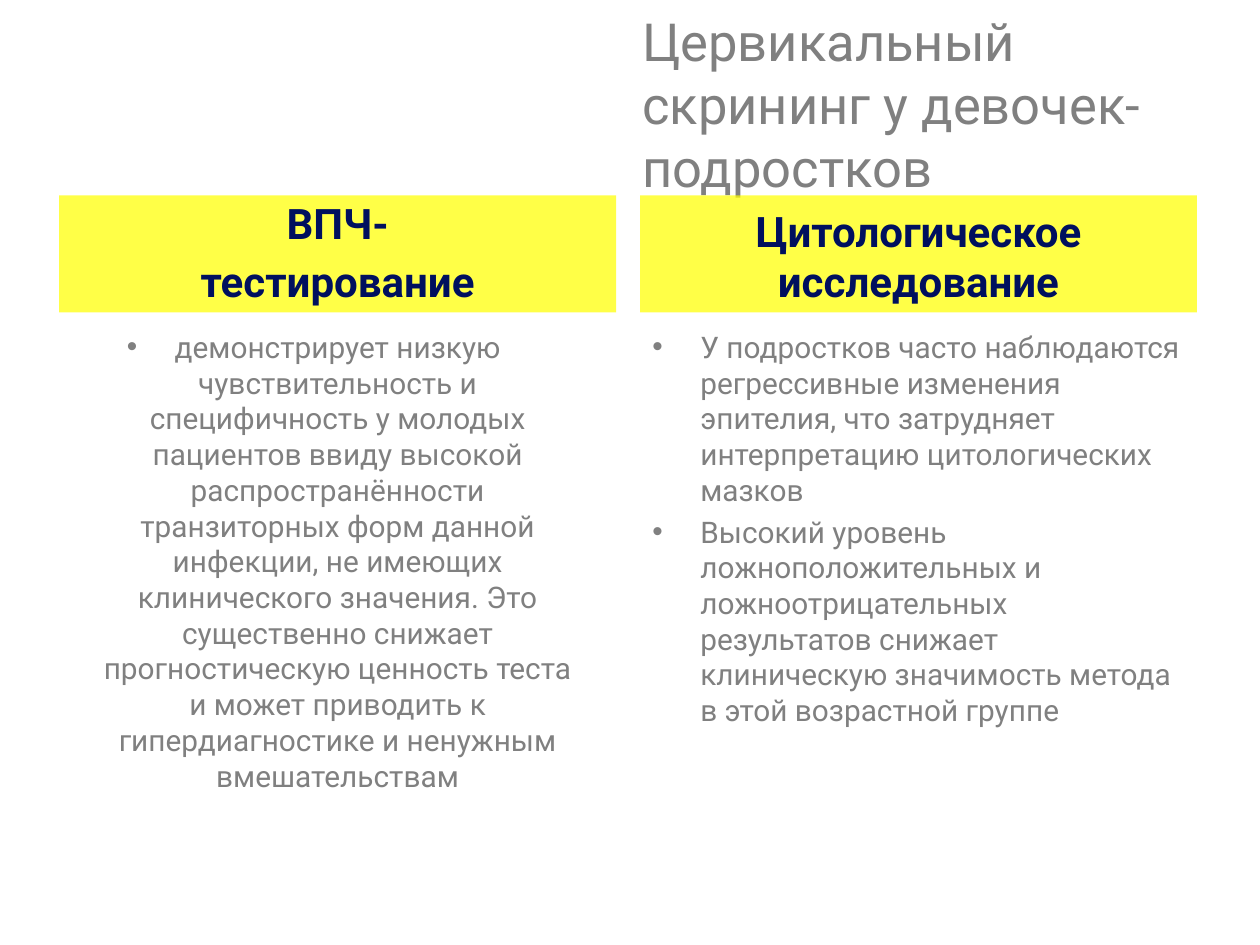
from lxml import etree
from pptx import Presentation
from pptx import util as u
from pptx.dml.color import RGBColor
from pptx.enum import shapes, text
from pptx.oxml.ns import qn

FONT = "Roboto"
GRAY, NAVY, YELLOW = "808080", "00105E", "FFFF00"
LEFT, CENTER = text.PP_ALIGN.LEFT, text.PP_ALIGN.CENTER

# Content
TITLE = "Цервикальный скрининг у девочек-подростков"
COLUMNS = [
    {
        "heading": ["ВПЧ-", "тестирование"],
        "heading_left": 0.47,
        "body": [
            "демонстрирует низкую чувствительность и специфичность у молодых "
            "пациентов ввиду высокой распространённости транзиторных форм данной "
            "инфекции, не имеющих клинического значения. Это существенно снижает "
            "прогностическую ценность теста и может приводить к гипердиагностике "
            "и ненужным вмешательствам",
        ],
        "body_left": 0.28,
        "align": CENTER,
    },
    {
        "heading": ["Цитологическое исследование"],
        "heading_left": 5.08,
        "body": [
            "У подростков часто наблюдаются регрессивные изменения эпителия, "
            "что затрудняет интерпретацию цитологических мазков",
            "Высокий уровень ложноположительных и ложноотрицательных результатов "
            "снижает клиническую значимость метода в этой возрастной группе",
        ],
        "body_left": 5.08,
        "align": LEFT,
    },
]
COLUMN_WIDTH = 4.42
HEADING_TOP, HEADING_HEIGHT = 1.55, 0.93
BODY_TOP, BODY_HEIGHT = 2.56, 4.32


def color(value):
    return RGBColor.from_string(value)


def add_bullet(para):
    props = para._p.get_or_add_pPr()
    props.set("marL", str(u.Inches(0.38)))
    props.set("indent", str(-u.Inches(0.38)))
    etree.SubElement(props, qn("a:buFont")).set("typeface", "Arial")
    etree.SubElement(props, qn("a:buChar")).set("char", "•")


def write(box, lines, size, ink, align=LEFT, anchor=text.MSO_ANCHOR.TOP,
          bold=False, bullets=False):
    frame = box.text_frame
    frame.word_wrap = True
    frame.vertical_anchor = anchor
    frame.text = "\n".join(lines)
    for index, para in enumerate(frame.paragraphs):
        para.alignment = align
        if index:
            para.space_before = u.Pt(size * 0.2)
        if bullets:
            add_bullet(para)
        for span in para.runs:
            span.font.name = FONT
            span.font.size = u.Pt(size)
            span.font.bold = bold
            span.font.color.rgb = color(ink)


def add_band(slide, left):
    band = slide.shapes.add_shape(
        shapes.MSO_SHAPE.RECTANGLE, u.Inches(left), u.Inches(HEADING_TOP),
        u.Inches(COLUMN_WIDTH), u.Inches(HEADING_HEIGHT))
    band.shadow.inherit = False
    band.line.fill.background()
    band.fill.solid()
    band.fill.fore_color.rgb = color(YELLOW)
    # Translucent fill
    tint = band._element.spPr.find(qn("a:solidFill")).find(qn("a:srgbClr"))
    etree.SubElement(tint, qn("a:alpha")).set("val", "72000")
    return band


deck = Presentation()
deck.slide_width, deck.slide_height = u.Inches(10), u.Inches(7.5)
slide = deck.slides.add_slide(deck.slide_layouts[6])

# Title
title = slide.shapes.add_textbox(
    u.Inches(5), u.Inches(0.2), u.Inches(4.97), u.Inches(1.25))
write(title, [TITLE], 30, GRAY, anchor=text.MSO_ANCHOR.MIDDLE)

# Two columns: heading band above a bulleted text
for column in COLUMNS:
    band = add_band(slide, column["heading_left"])
    write(band, column["heading"], 24, NAVY, CENTER,
          text.MSO_ANCHOR.BOTTOM, bold=True)
    body = slide.shapes.add_textbox(
        u.Inches(column["body_left"]), u.Inches(BODY_TOP),
        u.Inches(COLUMN_WIDTH), u.Inches(BODY_HEIGHT))
    write(body, column["body"], 17, GRAY, column["align"], bullets=True)

deck.save("out.pptx")
